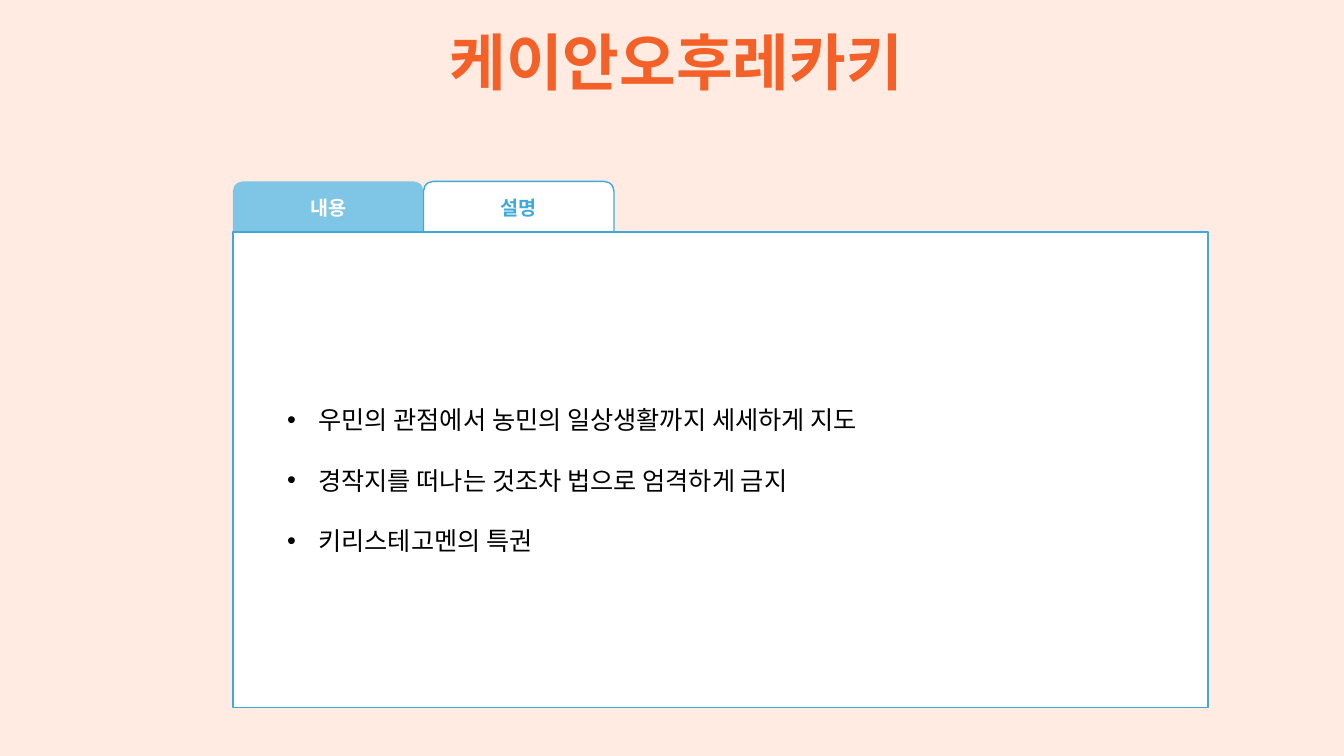
from dataclasses import dataclass

from pptx import Presentation
from pptx.dml.color import RGBColor
from pptx.enum.shapes import MSO_SHAPE
from pptx.enum.text import MSO_ANCHOR, MSO_AUTO_SIZE, PP_ALIGN
from pptx.oxml.ns import qn
from pptx.util import Inches, Pt
from lxml.etree import SubElement


@dataclass(frozen=True)
class Theme:
    font: str = "Noto Sans CJK KR"
    background: str = "FFEBE2"
    title: str = "F46128"
    tab: str = "7FC6E6"
    accent: str = "3EAADA"
    white: str = "FFFFFF"
    text: str = "000000"
    title_size: float = 44
    tab_size: float = 14
    body_size: float = 18
    body_pitch: float = 43.2


THEME = Theme()


def rgb(color):
    return RGBColor.from_string(color)


def style_paragraph(p, size, color, bold=False):
    """Set the font for both Latin and East Asian characters."""
    font = p.font
    font.name, font.size, font.bold = THEME.font, Pt(size), bold
    font.color.rgb = rgb(color)
    props = p._p.pPr.find(qn("a:defRPr"))
    SubElement(props, qn("a:ea")).set("typeface", THEME.font)


def add_bullet(p, indent):
    props = p._p.get_or_add_pPr()
    props.set("marL", str(indent))
    props.set("indent", str(-indent))
    SubElement(props, qn("a:buFont")).set("typeface", "Arial")
    SubElement(props, qn("a:buChar")).set("char", "•")


def add_box(slide, kind, left, top, width, height, fill, line=None):
    sp = slide.shapes.add_shape(
        kind, Inches(left), Inches(top), Inches(width), Inches(height))
    sp.shadow.inherit = False
    sp.fill.solid()
    sp.fill.fore_color.rgb = rgb(fill)
    if line:
        sp.line.color.rgb = rgb(line)
        sp.line.width = Pt(1)
    else:
        sp.line.fill.background()
    return sp


def set_title(slide, text, left, top, width, height):
    title = slide.shapes.title
    title.left, title.top = Inches(left), Inches(top)
    title.width, title.height = Inches(width), Inches(height)
    tf = title.text_frame
    tf.text = text
    tf.word_wrap = False
    tf.auto_size = MSO_AUTO_SIZE.NONE
    tf.vertical_anchor = MSO_ANCHOR.MIDDLE
    p = tf.paragraphs[0]
    p.alignment = PP_ALIGN.CENTER
    p.line_spacing = 1.0
    style_paragraph(p, THEME.title_size, THEME.title, bold=True)


def add_tabs(slide, tabs, left, top, width, height):
    """Place (label, fill, line, text colour) tabs side by side."""
    for i, (label, fill, line, color) in enumerate(tabs):
        sp = add_box(slide, MSO_SHAPE.ROUND_2_SAME_RECTANGLE,
                     left + i * width, top, width, height, fill, line)
        sp.adjustments[0] = 0.194
        tf = sp.text_frame
        tf.text = label
        tf.vertical_anchor = MSO_ANCHOR.MIDDLE
        p = tf.paragraphs[0]
        p.alignment = PP_ALIGN.CENTER
        style_paragraph(p, THEME.tab_size, color, bold=True)


def add_panel(slide, points, left, top, width, height):
    add_box(slide, MSO_SHAPE.RECTANGLE, left, top, width, height,
            THEME.white, THEME.accent)
    body = slide.shapes.add_textbox(
        Inches(left + 0.44), Inches(top + 0.78), Inches(7.93), Inches(3.07))
    tf = body.text_frame
    tf.word_wrap = True
    tf.vertical_anchor = MSO_ANCHOR.MIDDLE
    tf.text = "\n".join(points)
    for p in tf.paragraphs:
        p.line_spacing = Pt(THEME.body_pitch)
        add_bullet(p, Inches(0.31))
        style_paragraph(p, THEME.body_size, THEME.text)


def build_slide(prs):
    slide = prs.slides.add_slide(prs.slide_layouts[5])
    slide.background.fill.solid()
    slide.background.fill.fore_color.rgb = rgb(THEME.background)
    left, top, tab_height = 2.31, 2.3, 0.5
    set_title(slide, "케이안오후레카키", 4.14, 0.18, 5.14, 0.84)
    tabs = [
        ("내용", THEME.tab, None, THEME.white),
        ("설명", THEME.white, THEME.accent, THEME.accent),
    ]
    add_tabs(slide, tabs, left, top - tab_height, 1.89, tab_height)
    points = [
        "우민의 관점에서 농민의 일상생활까지 세세하게 지도",
        "경작지를 떠나는 것조차 법으로 엄격하게 금지",
        "키리스테고멘의 특권",
    ]
    add_panel(slide, points, left, top, 9.67, 4.72)


def main():
    prs = Presentation()
    prs.slide_width, prs.slide_height = Inches(13.33), Inches(7.5)
    build_slide(prs)
    prs.save("out.pptx")


if __name__ == "__main__":
    main()
